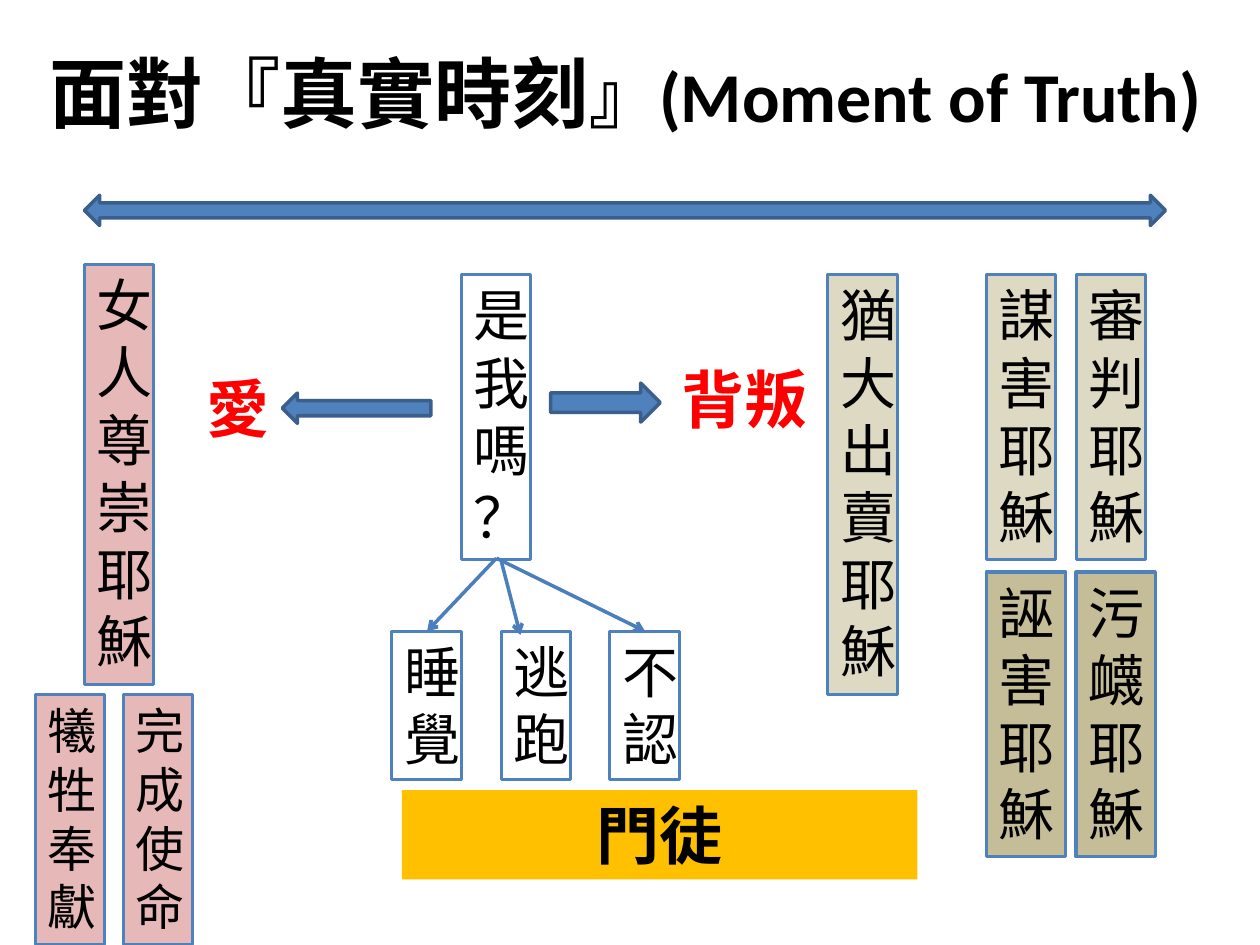
from dataclasses import dataclass
from typing import Optional

from lxml import etree
from pptx import Presentation
from pptx.dml.color import RGBColor
from pptx.enum.shapes import MSO_CONNECTOR, MSO_SHAPE
from pptx.enum.text import MSO_ANCHOR, MSO_AUTO_SIZE, PP_ALIGN
from pptx.oxml.ns import qn
from pptx.util import Inches, Pt

STRAIGHT = MSO_CONNECTOR.STRAIGHT
LEFT_RIGHT, LEFT, RIGHT = MSO_SHAPE.LEFT_RIGHT_ARROW, MSO_SHAPE.LEFT_ARROW, MSO_SHAPE.RIGHT_ARROW
MIDDLE, TOP = MSO_ANCHOR.MIDDLE, MSO_ANCHOR.TOP
GROW = MSO_AUTO_SIZE.SHAPE_TO_FIT_TEXT
CENTER, START = PP_ALIGN.CENTER, PP_ALIGN.LEFT

FONT = "Calibri"
BLACK = RGBColor(0x00, 0x00, 0x00)
RED = RGBColor(0xFF, 0x00, 0x00)
BLUE = RGBColor(0x4F, 0x81, 0xBD)
DARK_BLUE = RGBColor(0x3A, 0x5F, 0x8C)
LINK_BLUE = RGBColor(0x4B, 0x7E, 0xBC)
PINK = RGBColor(0xE6, 0xB9, 0xB8)
SAND = RGBColor(0xDD, 0xD9, 0xC3)
KHAKI = RGBColor(0xC4, 0xBD, 0x97)
GOLD = RGBColor(0xFF, 0xC0, 0x00)

COLUMN_WIDTH = 0.55


@dataclass
class Label:
    text: str
    left: float
    top: float
    width: float
    height: float
    size: int = 36
    fill: Optional[RGBColor] = None
    color: RGBColor = BLACK
    align: PP_ALIGN = CENTER


@dataclass
class Column:
    """A narrow framed box whose text runs downwards, one character a line."""
    text: str
    left: float
    top: float
    height: float
    fill: Optional[RGBColor] = None
    width: float = COLUMN_WIDTH
    size: int = 32


@dataclass
class Arrow:
    kind: MSO_SHAPE
    left: float
    top: float
    width: float
    height: float


@dataclass
class Link:
    start: tuple[float, float]
    end: tuple[float, float]


COLUMNS = [
    # Love
    Column("女人尊崇耶穌", 0.67, 2.1, 3.33, PINK),
    Column("犧牲奉獻", 0.28, 5.51, 1.99, PINK, size=28),
    Column("完成使命", 0.98, 5.51, 1.99, PINK, size=28),
    # Disciples
    Column("是我嗎？", 3.66, 2.18, 2.26),
    Column("睡覺", 3.11, 5.01, 1.18),
    Column("逃跑", 3.98, 5.01, 1.18),
    Column("不認", 4.84, 5.01, 1.18),
    # Betrayal
    Column("猶大出賣耶穌", 6.57, 2.18, 3.33, SAND),
    Column("謀害耶穌", 7.83, 2.18, 2.26, SAND),
    Column("審判耶穌", 8.54, 2.18, 2.26, SAND),
    Column("誣害耶穌", 7.83, 4.54, 2.26, KHAKI, width=0.63),
    Column("污衊耶穌", 8.54, 4.54, 2.26, KHAKI, width=0.63),
]

ARROWS = [
    Arrow(LEFT_RIGHT, 0.67, 1.55, 8.58, 0.24),
    Arrow(RIGHT, 4.37, 3.04, 0.87, 0.31),
    Arrow(LEFT, 2.24, 3.12, 1.18, 0.24),
]

LINKS = [
    Link((3.94, 4.43), (3.39, 5.01)),
    Link((3.94, 4.43), (5.12, 5.01)),
    Link((3.98, 4.46), (4.13, 5.04)),
]

LABELS = [
    Label("愛", 1.54, 2.88, 0.63, 0.71, color=RED, align=START),
    Label("背叛", 5.31, 2.81, 1.26, 0.71, color=RED, align=START),
    Label("門徒", 3.19, 6.27, 4.09, 0.71, fill=GOLD),
]


def add_span(para, text: str, size: int, color: RGBColor = BLACK, bold: bool = False) -> None:
    span = para.add_run()
    span.text = text
    span.font.name = FONT
    span.font.size = Pt(size)
    span.font.bold = bold
    span.font.color.rgb = color


def add_box(page, left: float, top: float, width: float, height: float,
            fill: Optional[RGBColor] = None):
    box = page.shapes.add_textbox(Inches(left), Inches(top), Inches(width), Inches(height))
    box.text_frame.word_wrap = True
    box.text_frame.auto_size = GROW
    box.text_frame.vertical_anchor = TOP
    if fill is not None:
        box.fill.solid()
        box.fill.fore_color.rgb = fill
    return box


def add_title(page) -> None:
    box = add_box(page, 0.2, 0.3, 9.53, 0.85)
    frame = box.text_frame
    frame.auto_size = MSO_AUTO_SIZE.NONE
    frame.vertical_anchor = MIDDLE
    frame.margin_left = frame.margin_right = 0
    para = frame.paragraphs[0]
    para.alignment = CENTER
    add_span(para, "面對『真實時刻", 44, bold=True)
    add_span(para, "』(Moment of Truth)", 40, bold=True)


def add_label(page, label: Label) -> None:
    box = add_box(page, label.left, label.top, label.width, label.height, label.fill)
    para = box.text_frame.paragraphs[0]
    para.alignment = label.align
    add_span(para, label.text, label.size, label.color, bold=True)


def add_column(page, column: Column) -> None:
    box = add_box(page, column.left, column.top, column.width, column.height, column.fill)
    box.line.color.rgb = BLUE
    box.line.width = Pt(1.75)
    add_span(box.text_frame.paragraphs[0], column.text, column.size)


def add_arrow(page, arrow: Arrow) -> None:
    shape = page.shapes.add_shape(arrow.kind, Inches(arrow.left), Inches(arrow.top),
                                  Inches(arrow.width), Inches(arrow.height))
    shape.shadow.inherit = False
    shape.fill.solid()
    shape.fill.fore_color.rgb = BLUE
    shape.line.color.rgb = DARK_BLUE
    shape.line.width = Pt(2)


def add_link(page, link: Link) -> None:
    points = [Inches(value) for value in (*link.start, *link.end)]
    connector = page.shapes.add_connector(STRAIGHT, *points)
    connector.line.color.rgb = LINK_BLUE
    connector.line.width = Pt(2)
    outline = connector.line._get_or_add_ln()
    etree.SubElement(outline, qn("a:tailEnd"), type="arrow")
    etree.SubElement(connector._element.spPr, qn("a:effectLst"))


def main() -> None:
    deck = Presentation()
    deck.slide_width, deck.slide_height = Inches(10), Inches(7.5)
    page = deck.slides.add_slide(deck.slide_layouts[6])

    add_title(page)
    for column in COLUMNS:
        add_column(page, column)
    for arrow in ARROWS:
        add_arrow(page, arrow)
    for link in LINKS:
        add_link(page, link)
    for label in LABELS:
        add_label(page, label)

    deck.save("out.pptx")


if __name__ == "__main__":
    main()
